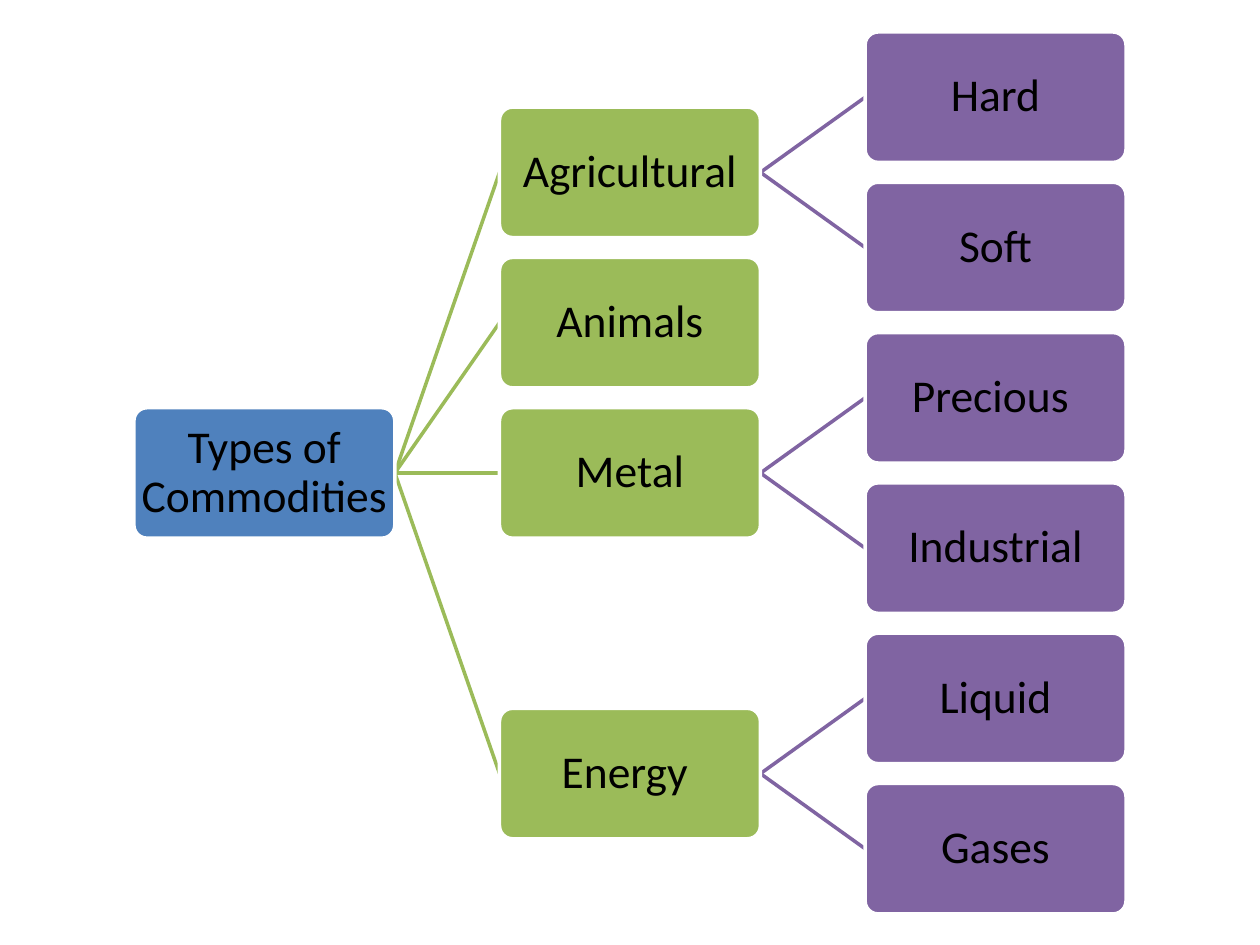
"""Build a slide with a tree of commodity types."""
from dataclasses import dataclass

from lxml import etree
from pptx import Presentation
from pptx import util as u
from pptx.dml.color import RGBColor
from pptx.enum import shapes, text
from pptx.oxml import ns


@dataclass(frozen=True)
class Theme:
    """Colours, type and line sizes of the slide."""
    levels: tuple = ("4F81BD", "9BBB59", "8064A2")
    outline: str = "FFFFFF"
    ink: str = "000000"
    font: str = "Calibri"
    size: int = 26
    line: int = 2


@dataclass(frozen=True)
class Grid:
    """Box size and the spacing of columns and rows, in centimetres."""
    left: float = 2.7
    column_step: float = 7.37
    first_middle: float = 1.96
    row_step: float = 3.03
    width: float = 5.26
    height: float = 2.63

    def box_left(self, level):
        """Return the left edge of a level's boxes."""
        return self.left + level * self.column_step

    def middle(self, row):
        """Return the vertical middle of a row."""
        return self.first_middle + row * self.row_step


THEME = Theme()
GRID = Grid()
TREE = ("Types of Commodities", 2.5, [
    ("Agricultural", 0.5, [("Hard", 0, []), ("Soft", 1, [])]),
    ("Animals", 1.5, []),
    ("Metal", 2.5, [("Precious ", 2, []), ("Industrial", 3, [])]),
    ("Energy ", 4.5, [("Liquid", 4, []), ("Gases", 5, [])]),
])


def set_values(target, values):
    """Set the attributes of target from a dict."""
    for name, value in values.items():
        setattr(target, name, value)


def add_box(slide, label, level, row):
    """Add a rounded box with its label."""
    shape = slide.shapes.add_shape(
        shapes.MSO_SHAPE.ROUNDED_RECTANGLE,
        u.Cm(GRID.box_left(level)), u.Cm(GRID.middle(row) - GRID.height / 2),
        u.Cm(GRID.width), u.Cm(GRID.height))
    shape.adjustments[0] = 0.1
    shape.shadow.inherit = False
    shape.fill.solid()
    shape.fill.fore_color.rgb = RGBColor.from_string(THEME.levels[level])
    shape.line.color.rgb = RGBColor.from_string(THEME.outline)
    shape.line.width = u.Pt(THEME.line)
    frame = shape.text_frame
    set_values(frame, {
        "text": label, "word_wrap": True,
        "vertical_anchor": text.MSO_ANCHOR.MIDDLE,
        **{f"margin_{side}": u.Cm(0.04)
           for side in ("left", "top", "right", "bottom")}})
    paragraph = frame.paragraphs[0]
    set_values(paragraph, {"alignment": text.PP_ALIGN.CENTER,
                           "line_spacing": 0.9})
    font = paragraph.runs[0].font
    set_values(font, {"name": THEME.font, "size": u.Pt(THEME.size)})
    font.color.rgb = RGBColor.from_string(THEME.ink)


def add_branch(slide, level, parent_row, row):
    """Add the line from a parent box to a box on the given level."""
    connector = slide.shapes.add_connector(
        shapes.MSO_CONNECTOR.STRAIGHT,
        u.Cm(GRID.box_left(level - 1) + GRID.width),
        u.Cm(GRID.middle(parent_row)),
        u.Cm(GRID.box_left(level)), u.Cm(GRID.middle(row)))
    connector.line.color.rgb = RGBColor.from_string(THEME.levels[level])
    connector.line.width = u.Pt(THEME.line)
    properties = connector.element.find(ns.qn("p:spPr"))
    etree.SubElement(properties, ns.qn("a:effectLst"))


def add_tree(slide, node, level=0):
    """Add a node, its branches and everything below it."""
    label, row, children = node
    for child in children:
        add_branch(slide, level + 1, row, child[1])
        add_tree(slide, child, level + 1)
    add_box(slide, label, level, row)


def main():
    """Create and save the presentation."""
    presentation = Presentation()
    set_values(presentation, {"slide_width": u.Cm(25.4),
                              "slide_height": u.Cm(19.05)})
    slide = presentation.slides.add_slide(presentation.slide_layouts[6])
    add_tree(slide, TREE)
    presentation.save("out.pptx")


if __name__ == "__main__":
    main()
